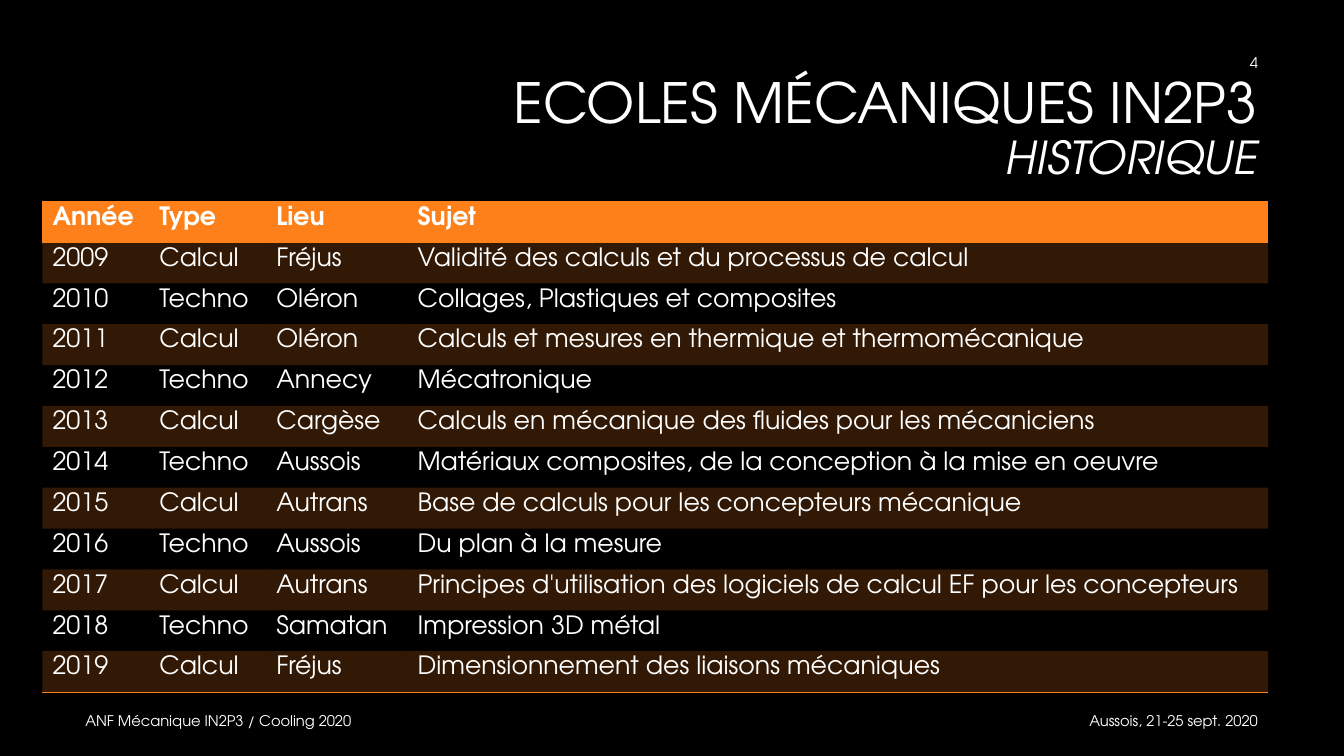
import pptx
import pptx.dml.color
import pptx.enum.text
import pptx.oxml
import pptx.oxml.ns
import pptx.util
from lxml import etree
from pptx.util import Cm

FONT = "TeX Gyre Adventor"
WHITE, BLACK, ORANGE = "FFFFFF", "000000", "FE801A"
TITLE_SIZE, SUBTITLE_SIZE = 39.6, 32.4
LEFT = pptx.enum.text.PP_ALIGN.LEFT
RIGHT = pptx.enum.text.PP_ALIGN.RIGHT
MIDDLE = pptx.enum.text.MSO_ANCHOR.MIDDLE
PLAIN_TABLE_STYLE = "{2D5ABB26-0587-4C30-8999-92F81FD0307C}"

RIGHT_EDGE = 31.95
COLUMN_WIDTHS = (2.69, 2.95, 3.56, 21.69)
ROW_HEIGHT = 1.03
SCHOOLS = [
    ("Année", "Type", "Lieu", "Sujet"),
    ("2009", "Calcul", "Fréjus", "Validité des calculs et du processus de calcul"),
    ("2010", "Techno", "Oléron", "Collages, Plastiques et composites"),
    ("2011", "Calcul", "Oléron", "Calculs et mesures en thermique et thermomécanique"),
    ("2012", "Techno", "Annecy", "Mécatronique"),
    ("2013", "Calcul", "Cargèse", "Calculs en mécanique des fluides pour les mécaniciens"),
    ("2014", "Techno", "Aussois", "Matériaux composites, de la conception à la mise en oeuvre"),
    ("2015", "Calcul", "Autrans", "Base de calculs pour les concepteurs mécanique"),
    ("2016", "Techno", "Aussois", "Du plan à la mesure"),
    ("2017", "Calcul", "Autrans",
     "Principes d'utilisation des logiciels de calcul EF pour les concepteurs"),
    ("2018", "Techno", "Samatan", "Impression 3D métal"),
    ("2019", "Calcul", "Fréjus", "Dimensionnement des liaisons mécaniques"),
]


def set_color(color_format, hex_string):
    color_format.rgb = pptx.dml.color.RGBColor.from_string(hex_string)


def write_text(paragraph, text, size=18, bold=False, italic=False, align=LEFT):
    paragraph.alignment = align
    run = paragraph.add_run()
    run.text = text
    run.font.name = FONT
    run.font.size = pptx.util.Pt(size)
    run.font.bold = bold
    run.font.italic = italic
    set_color(run.font.color, WHITE)


def fill_solid(fill, hex_string):
    fill.solid()
    set_color(fill.fore_color, hex_string)


def add_title(slide, title, subtitle):
    shape = slide.shapes.title
    shape.left, shape.top = Cm(0), Cm(2.13)
    shape.width, shape.height = Cm(RIGHT_EDGE), Cm(3.58)
    frame = shape.text_frame
    frame.auto_size = pptx.enum.text.MSO_AUTO_SIZE.NONE
    frame.vertical_anchor = MIDDLE
    frame.margin_bottom = Cm(1.4)
    paragraph = frame.paragraphs[0]
    paragraph.line_spacing = 0.9
    write_text(paragraph, title, size=TITLE_SIZE, align=RIGHT)
    paragraph.add_line_break()
    # The break takes the size of the title line
    line_break = paragraph._p.find(pptx.oxml.ns.qn("a:br"))
    etree.SubElement(line_break, pptx.oxml.ns.qn("a:rPr"), sz=str(round(TITLE_SIZE * 100)))
    write_text(paragraph, subtitle, size=SUBTITLE_SIZE, italic=True, align=RIGHT)


def add_label(slide, text, left, top, width, align=LEFT):
    frame = slide.shapes.add_textbox(Cm(left), Cm(top), Cm(width), Cm(1.02)).text_frame
    frame.word_wrap = True
    frame.vertical_anchor = MIDDLE
    write_text(frame.paragraphs[0], text, size=10.5, align=align)


def add_borders(cell, sides):
    properties = cell._tc.get_or_add_tcPr()
    for position, side in enumerate(sides):
        properties.insert(position, pptx.oxml.parse_xml(
            f'<a:ln{side} {pptx.oxml.ns.nsdecls("a")} w="12700"><a:solidFill>'
            f'<a:srgbClr val="{ORANGE}"/></a:solidFill></a:ln{side}>'))


def fill_cell(cell, row):
    if row and row % 2 == 0:
        cell.fill.background()
        return
    fill_solid(cell.fill, ORANGE)
    if row:
        # Bands are 20 % opaque
        color = cell._tc.tcPr.find(".//" + pptx.oxml.ns.qn("a:srgbClr"))
        etree.SubElement(color, pptx.oxml.ns.qn("a:alpha"), val="20000")


def add_school_table(slide):
    last_row = len(SCHOOLS) - 1
    shape = slide.shapes.add_table(
        len(SCHOOLS), len(COLUMN_WIDTHS), Cm(1.07), Cm(5.08),
        Cm(sum(COLUMN_WIDTHS)), Cm(ROW_HEIGHT * len(SCHOOLS)))
    table = shape.table
    table._tbl.tblPr.find(pptx.oxml.ns.qn("a:tableStyleId")).text = PLAIN_TABLE_STYLE
    for column, width in zip(table.columns, COLUMN_WIDTHS):
        column.width = Cm(width)
    for row, values in enumerate(SCHOOLS):
        table.rows[row].height = Cm(ROW_HEIGHT)
        for column, text in enumerate(values):
            cell = table.cell(row, column)
            write_text(cell.text_frame.paragraphs[0], text, bold=row == 0)
            fill_cell(cell, row)
            add_borders(cell, {0: "TB", last_row: "B"}.get(row, ""))


def main():
    presentation = pptx.Presentation()
    presentation.slide_width, presentation.slide_height = Cm(33.87), Cm(19.05)
    slide = presentation.slides.add_slide(presentation.slide_layouts[5])
    fill_solid(slide.background.fill, BLACK)

    add_title(slide, "ECOLES MÉCANIQUES IN2P3", "HISTORIQUE")
    add_school_table(slide)

    # Footer and slide number
    add_label(slide, "Aussois, 21-25 sept. 2020", RIGHT_EDGE - 8.08, 17.65, 8.08, align=RIGHT)
    add_label(slide, "ANF Mécanique IN2P3 / Cooling 2020", 1.9, 17.65, 21.59)
    add_label(slide, "4", RIGHT_EDGE - 7.62, 1.07, 7.62, align=RIGHT)

    presentation.save("out.pptx")


if __name__ == "__main__":
    main()
